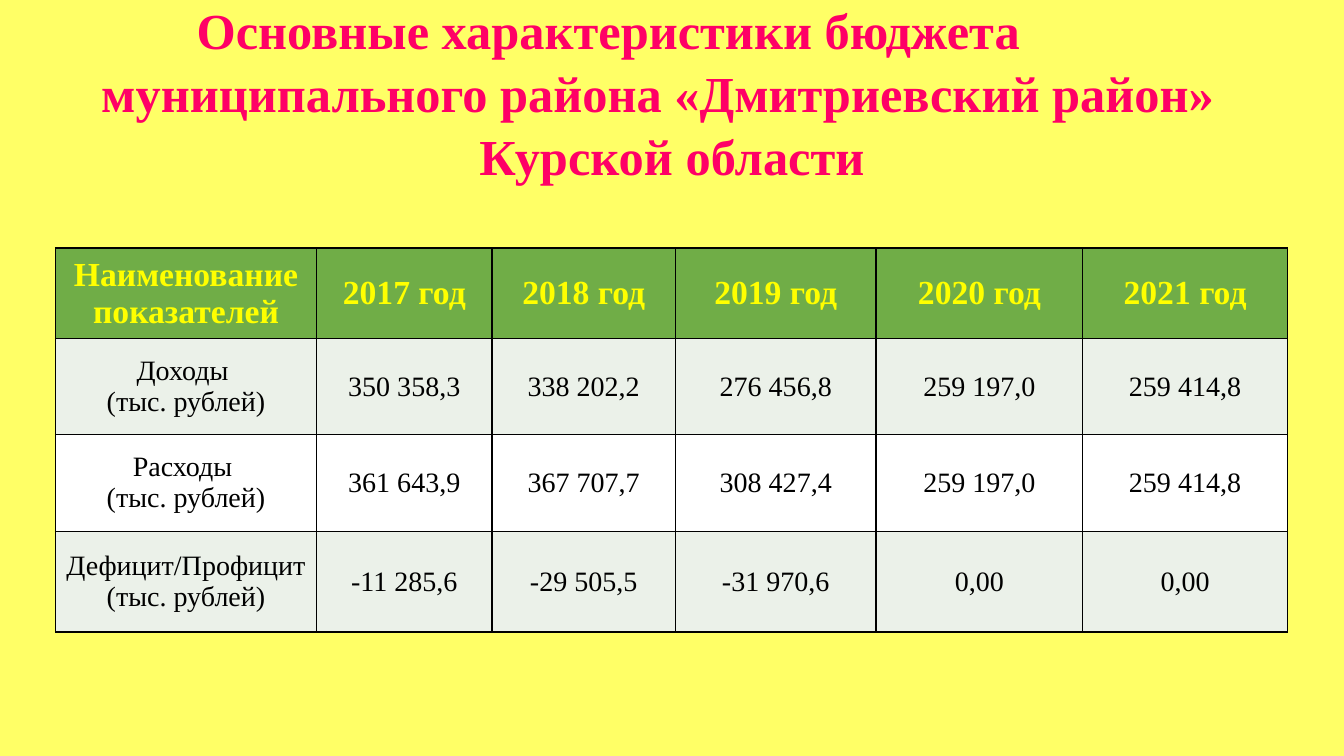
from dataclasses import dataclass

from lxml import etree
from pptx import Presentation
from pptx import util as u
from pptx.dml.color import RGBColor
from pptx.enum import text
from pptx.oxml import ns
from pptx.slide import Slide
from pptx.table import _Cell as Cell
from pptx.text.text import _Paragraph as Para

FONT = "Times New Roman"
PAPER = RGBColor(0xFF, 0xFF, 0x66)
PINK = RGBColor(0xFF, 0x00, 0x66)
GREEN = RGBColor(0x70, 0xAD, 0x47)
YELLOW = RGBColor(0xFF, 0xFF, 0x00)
PALE = RGBColor(0xEB, 0xF1, 0xE9)
WHITE = RGBColor(0xFF, 0xFF, 0xFF)
BLACK = RGBColor(0x00, 0x00, 0x00)


@dataclass
class Line:
    words: str
    indent: float


@dataclass
class Style:
    size: int
    color: RGBColor
    bold: bool = False


@dataclass
class Row:
    height: float
    fill: RGBColor
    style: Style
    cells: list[str]


TITLE = Style(36, PINK, True)
HEAD = Style(24, YELLOW, True)
BODY = Style(20, BLACK)
UNIT = "(тыс. рублей)"

LINES = [
    Line("Основные характеристики бюджета", 0),
    Line("муниципального района «Дмитриевский район»", 0.98),
    Line("Курской области", 1.26),
]
WIDTHS = [2.59, 1.74, 1.82, 1.99, 2.05, 2.03]
ROWS = [
    Row(0.83, GREEN, HEAD,
        ["Наименование показателей"] + [f"{year} год" for year in range(2017, 2022)]),
    Row(0.95, PALE, BODY,
        [f"Доходы \n{UNIT}", "350 358,3", "338 202,2", "276 456,8", "259 197,0", "259 414,8"]),
    Row(0.96, WHITE, BODY,
        [f"Расходы \n{UNIT}", "361 643,9", "367 707,7", "308 427,4", "259 197,0", "259 414,8"]),
    Row(1, PALE, BODY,
        [f"Дефицит/Профицит\n{UNIT}", "-11 285,6", "-29 505,5", "-31 970,6", "0,00", "0,00"]),
]


def set_font(para: Para, style: Style) -> None:
    para.alignment = text.PP_ALIGN.CENTER
    para.font.name = FONT
    para.font.size = u.Pt(style.size)
    para.font.bold = style.bold
    para.font.color.rgb = style.color


def add_title(slide: Slide) -> None:
    box = slide.shapes.add_textbox(0, 0, u.Inches(13.33), u.Inches(1.81))
    frame = box.text_frame
    frame.word_wrap = True
    frame.vertical_anchor = text.MSO_ANCHOR.MIDDLE
    frame.margin_left, frame.margin_right = 0, u.Inches(1.26)
    frame.text = "\n".join(line.words for line in LINES)
    for para, line in zip(frame.paragraphs, LINES):
        set_font(para, TITLE)
        para.line_spacing = 1.04
        # Left indents stagger the centred lines
        para._p.get_or_add_pPr().set("marL", str(u.Inches(line.indent)))


def add_edges(cell: Cell) -> None:
    props = cell._tc.get_or_add_tcPr()
    for side in "LRTB":
        edge = etree.SubElement(props, ns.qn(f"a:ln{side}"), w=str(u.Pt(1)))
        fill = etree.SubElement(edge, ns.qn("a:solidFill"))
        etree.SubElement(fill, ns.qn("a:srgbClr"), val=str(BLACK))


def fill_cell(cell: Cell, words: str, row: Row) -> None:
    add_edges(cell)
    cell.fill.solid()
    cell.fill.fore_color.rgb = row.fill
    cell.vertical_anchor = text.MSO_ANCHOR.MIDDLE
    cell.text = words
    for para in cell.text_frame.paragraphs:
        set_font(para, row.style)


def add_budget(slide: Slide) -> None:
    shape = slide.shapes.add_table(
        len(ROWS), len(WIDTHS), u.Inches(0.55), u.Inches(2.46),
        u.Inches(sum(WIDTHS)), u.Inches(sum(row.height for row in ROWS)))
    table = shape.table
    for col, width in zip(table.columns, WIDTHS):
        col.width = u.Inches(width)
    for i, row in enumerate(ROWS):
        table.rows[i].height = u.Inches(row.height)
        for j, words in enumerate(row.cells):
            cell = table.cell(i, j)
            fill_cell(cell, words, row)
            # Later years have tighter margins
            if i > 0 and j > 2:
                cell.margin_left = cell.margin_right = u.Inches(0.07)
                cell.margin_top = cell.margin_bottom = 0


def main() -> None:
    deck = Presentation()
    deck.slide_width, deck.slide_height = u.Inches(13.33), u.Inches(7.5)
    slide = deck.slides.add_slide(deck.slide_layouts[6])
    # Background
    slide.background.fill.solid()
    slide.background.fill.fore_color.rgb = PAPER
    # Content
    add_title(slide)
    add_budget(slide)
    deck.save("out.pptx")


if __name__ == "__main__":
    main()
